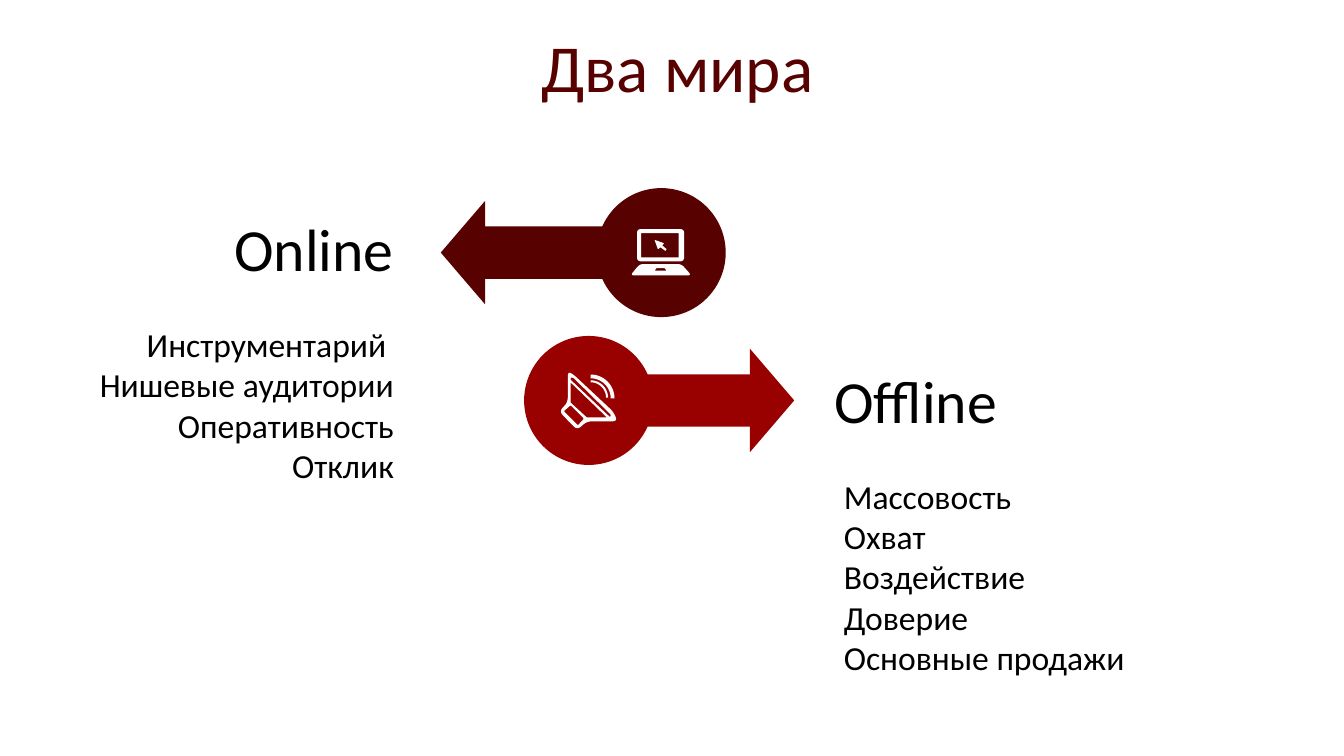
from dataclasses import dataclass
from math import cos, dist, pi, sin

from pptx import Presentation
from pptx.dml.color import RGBColor
from pptx.enum import shapes, text
from pptx.util import Inches, Pt


@dataclass(frozen=True)
class Theme:
    font: str = "Calibri"
    dark: RGBColor = RGBColor(0x58, 0x01, 0x01)
    red: RGBColor = RGBColor(0x99, 0x00, 0x00)
    black: RGBColor = RGBColor(0, 0, 0)
    white: RGBColor = RGBColor(255, 255, 255)
    title_size: int = 36
    heading_size: int = 32
    list_size: int = 18


THEME = Theme()
ALIGN = text.PP_ALIGN


def rounded(points, radius):
    outline = []
    for index, corner in enumerate(points):
        ends = []
        for neighbour in (points[index - 1], points[(index + 1) % len(points)]):
            length = dist(corner, neighbour)
            part = min(radius, length / 2) / length
            ends.append([a + (b - a) * part for a, b in zip(corner, neighbour)])
        for step in range(7):
            t = step / 6
            outline.append([
                (1 - t) ** 2 * a + 2 * t * (1 - t) * c + t ** 2 * b
                for a, c, b in zip(ends[0], corner, ends[1])
            ])
    return outline


def wave(x, y, inner, outer):
    angles = [pi / 2 * step / 16 for step in range(17)]
    rim = [(x + outer * sin(a), y - outer * cos(a)) for a in angles]
    return rim + [(x + inner * sin(a), y - inner * cos(a)) for a in reversed(angles)]


LAPTOP = [[
    rounded([(4, 0), (39, 0), (39, 24), (4, 24)], 3),
    [(7, 3), (35, 3), (35, 21), (7, 21)],
    rounded([(6, 26), (37, 26), (44.5, 34.5), (-1, 34.5)], 3),
    [(17, 31), (18.5, 29), (24.5, 29), (26, 31)],
    [(17, 8), (24, 10.5), (22.8, 12.2), (26, 15), (25, 16.2), (21.5, 13.6), (19.5, 15)],
]]
MEGAPHONE = [
    [
        rounded([(5, -2), (9, 0), (39, 28), (42, 35), (19, 35),
                 (12, 41.5), (-1.5, 27.5), (5, 21)], 4),
        [(7, 6), (34, 32), (19, 32), (7, 21)],
        rounded([(7, 2.5), (9, 2.5), (37, 30), (36.5, 32), (7, 4)], 1),
        rounded([(7, 23), (17, 33), (12.5, 38), (2, 27.5)], 1),
    ],
    [wave(22, 17.5, 11.5, 13)],
    [wave(22, 18, 15, 17.8)],
]


def paint(shape, color):
    shape.shadow.inherit = False
    shape.fill.solid()
    shape.fill.fore_color.rgb = color
    shape.line.fill.background()


def add_outline(slide, contours, color):
    paths = [[(Inches(x), Inches(y)) for x, y in points] for points in contours]
    builder = slide.shapes.build_freeform(*paths[0][0])
    for index, points in enumerate(paths):
        if index:
            builder.move_to(*points[0])
        builder.add_line_segments(points[1:], close=True)
    paint(builder.convert_to_shape(), color)


def add_preset(slide, kind, left, top, width, height, color):
    shape = slide.shapes.add_shape(
        kind, Inches(left), Inches(top), Inches(width), Inches(height))
    paint(shape, color)


def add_icon(slide, icon, left, top):
    for contours in icon:
        placed = [[(left + x / 100, top + y / 100) for x, y in points]
                  for points in contours]
        add_outline(slide, placed, THEME.white)


def add_arrow(slide, box, points_left, color, icon, icon_size):
    left, top, width, height = box
    head, overlap, inset, shaft_height, head_height = 0.33, 0.04, 0.22, 0.39, 0.77
    middle = top + height / 2
    shaft_width = width - head - height + overlap + inset
    if points_left:
        tip, base = left, left + head
        shaft_left, circle_left = base - overlap, left + width - height
    else:
        tip, base = left + width, left + width - head
        shaft_left, circle_left = left + height - inset, left
    add_preset(slide, shapes.MSO_SHAPE.RECTANGLE, shaft_left,
               middle - shaft_height / 2, shaft_width, shaft_height, color)
    add_outline(slide, [[(tip, middle), (base, middle - head_height / 2),
                         (base, middle + head_height / 2)]], color)
    add_preset(slide, shapes.MSO_SHAPE.OVAL, circle_left, top, height, height, color)
    icon_width, icon_height = icon_size
    add_icon(slide, icon, circle_left + (height - icon_width) / 2,
             middle - icon_height / 2)


def write_lines(frame, lines, size, color, alignment):
    frame.word_wrap = True
    frame.auto_size = text.MSO_AUTO_SIZE.NONE
    for index, line in enumerate(lines):
        paragraph = frame.add_paragraph() if index else frame.paragraphs[0]
        paragraph.alignment = alignment
        run = paragraph.add_run()
        run.text = line
        run.font.name = THEME.font
        run.font.size = Pt(size)
        run.font.color.rgb = color


def add_title(slide, box, words):
    title = slide.shapes.title
    title.left, title.top, title.width, title.height = map(Inches, box)
    title.text_frame.vertical_anchor = text.MSO_ANCHOR.BOTTOM
    write_lines(title.text_frame, [words], THEME.title_size, THEME.dark, ALIGN.CENTER)


def add_world(slide, box, heading, items, alignment):
    left, top, width, height = box
    heading_height, items_top = 0.65, 0.83
    indent = 0.07 if alignment == ALIGN.LEFT else 0
    parts = [
        ((left, top, width, heading_height), [heading], THEME.heading_size),
        ((left + indent, top + items_top, width - indent, height - items_top),
         items, THEME.list_size),
    ]
    for place, lines, size in parts:
        textbox = slide.shapes.add_textbox(*map(Inches, place))
        write_lines(textbox.text_frame, lines, size, THEME.black, alignment)


def main():
    presentation = Presentation()
    presentation.slide_width = Inches(10)
    presentation.slide_height = presentation.slide_width * 9 // 16
    slide = presentation.slides.add_slide(presentation.slide_layouts[5])
    add_title(slide, (0.38, 0.38, 9.32, 0.46), "Два мира")
    add_arrow(slide, (3.28, 1.4, 2.12, 0.96), True, THEME.dark, LAPTOP, (0.44, 0.35))
    add_arrow(slide, (3.9, 2.5, 2.01, 0.96), False, THEME.red, MEGAPHONE, (0.41, 0.39))
    add_world(slide, (0.56, 1.53, 2.47, 2.38), "Online",
              ["Инструментарий ", "Нишевые аудитории", "Оперативность", "Отклик"],
              ALIGN.RIGHT)
    add_world(slide, (6.11, 2.66, 2.68, 2.74), "Offline",
              ["Массовость", "Охват", "Воздействие", "Доверие", "Основные продажи"],
              ALIGN.LEFT)
    presentation.save("out.pptx")


if __name__ == "__main__":
    main()
